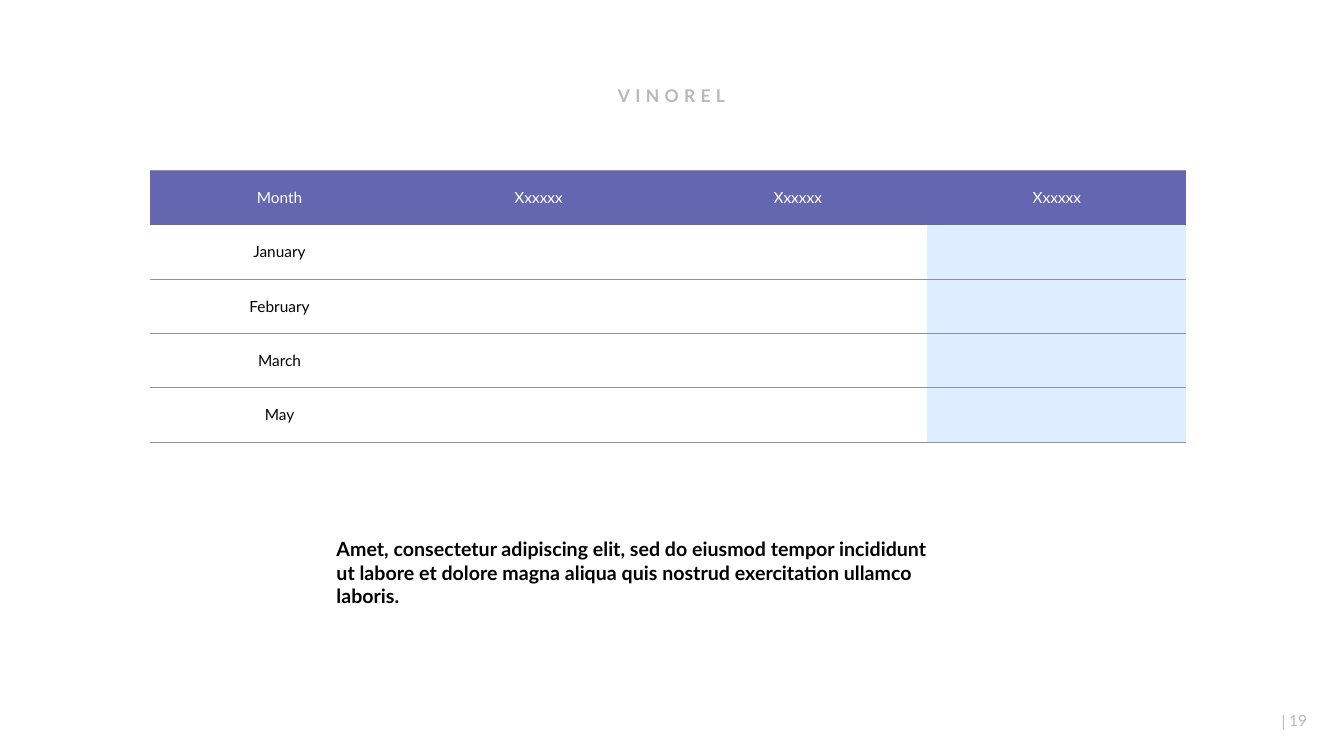
from lxml import etree
from pptx import Presentation
from pptx import util as u
from pptx.dml.color import RGBColor
from pptx.enum import text
from pptx.oxml.ns import qn

HEADERS = ["Month", "Xxxxxx", "Xxxxxx", "Xxxxxx"]
MONTHS = ["January", "February", "March", "May"]
PLAIN_TABLE = "{2D5ABB26-0587-4C30-8999-92F81FD0307C}"


def color(value):
    return RGBColor.from_string(value)


class SlideBuilder:
    font = "Lato"
    black, white, gray = "000000", "FFFFFF", "B7B9BA"
    purple, light_blue, rule_gray = "6566B0", "DEEDFF", "929292"

    def __init__(self, presentation):
        self.slide = presentation.slides.add_slide(presentation.slide_layouts[6])

    def style(self, paragraph, size, ink, align, bold=False):
        paragraph.alignment = align
        paragraph.font.name = self.font
        paragraph.font.size = u.Pt(size)
        paragraph.font.bold = bold
        paragraph.font.color.rgb = color(ink)

    def label(self, words, left, top, width, height, size, ink,
              align=text.PP_ALIGN.LEFT, anchor=text.MSO_ANCHOR.TOP, bold=False):
        box = self.slide.shapes.add_textbox(
            u.Cm(left), u.Cm(top), u.Cm(width), u.Cm(height))
        frame = box.text_frame
        frame.word_wrap = True
        frame.vertical_anchor = anchor
        paragraph = frame.paragraphs[0]
        paragraph.text = words
        self.style(paragraph, size, ink, align, bold)
        return paragraph

    def border(self, cell, side):
        line = etree.Element(qn(f"a:{side}"), w=str(u.Pt(0.5)))
        fill = etree.SubElement(line, qn("a:solidFill"))
        etree.SubElement(fill, qn("a:srgbClr"), val=self.rule_gray)
        cell._tc.get_or_add_tcPr().insert(0, line)

    def cell(self, cell, words, ink, fill):
        cell.text = words
        cell.vertical_anchor = text.MSO_ANCHOR.MIDDLE
        cell.margin_left = cell.margin_right = u.Cm(0.08)
        cell.margin_top = cell.margin_bottom = u.Cm(0.08)
        self.style(cell.text_frame.paragraphs[0], 11, ink, text.PP_ALIGN.CENTER)
        if fill:
            cell.fill.solid()
            cell.fill.fore_color.rgb = color(fill)
        else:
            cell.fill.background()

    def month_table(self, left, top, column_width, row_height):
        rows, columns = len(MONTHS) + 1, len(HEADERS)
        shape = self.slide.shapes.add_table(
            rows, columns, u.Cm(left), u.Cm(top),
            u.Cm(column_width * columns), u.Cm(row_height * rows))
        table = shape.table
        table.horz_banding = False
        next(shape._element.iter(qn("a:tableStyleId"))).text = PLAIN_TABLE
        for column in table.columns:
            column.width = u.Cm(column_width)
        for row in table.rows:
            row.height = u.Cm(row_height)

        # Header row
        for index, header in enumerate(HEADERS):
            cell = table.cell(0, index)
            self.cell(cell, header, self.white, self.purple)
            self.border(cell, "lnT")

        # Month rows, with the last column tinted
        for row, month in enumerate(MONTHS, start=1):
            for index in range(columns):
                cell = table.cell(row, index)
                fill = self.light_blue if index == columns - 1 else None
                self.cell(cell, month if index == 0 else "", self.black, fill)
                self.border(cell, "lnB")


def main():
    presentation = Presentation()
    presentation.slide_width = u.Cm(33.87)
    presentation.slide_height = u.Cm(19.05)
    builder = SlideBuilder(presentation)
    middle = text.MSO_ANCHOR.MIDDLE

    # Title
    title = builder.label("VINOREL", 3.78, 2.08, 26.29, 0.74, 12.5, builder.gray,
                          text.PP_ALIGN.CENTER, middle, bold=True)
    title.line_spacing = 0.9
    title.runs[0].font._element.set("spc", "380")

    # Table
    builder.month_table(3.78, 4.29, 6.53, 1.37)

    # Summary
    builder.label(
        "Amet, consectetur adipiscing elit, sed do eiusmod tempor incididunt "
        "ut labore et dolore magna aliqua quis nostrud exercitation ullamco laboris.",
        8.23, 13.41, 15.65, 2.06, 14, builder.black, bold=True)

    # Page number
    builder.label("|", 32.05, 17.81, 0.58, 0.74, 11, builder.gray)
    builder.label("19", 31.39, 17.65, 1.8, 1.02, 11, builder.gray,
                  text.PP_ALIGN.RIGHT, middle)

    presentation.save("out.pptx")


if __name__ == "__main__":
    main()
